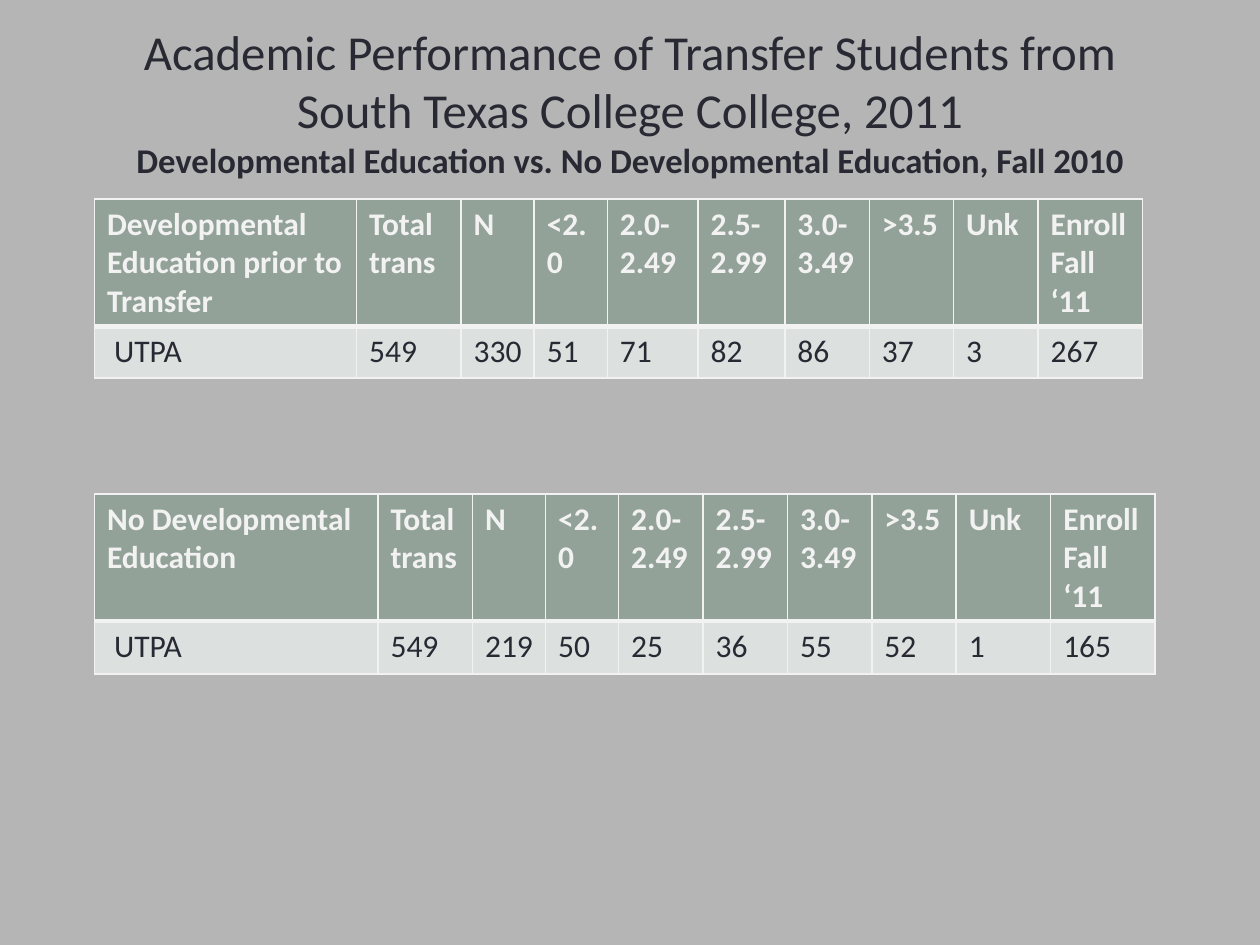
from dataclasses import dataclass

from lxml import etree
from pptx import Presentation
from pptx.dml.color import RGBColor
from pptx.enum.text import MSO_ANCHOR, PP_ALIGN
from pptx.oxml.ns import qn
from pptx.util import Inches, Pt

CENTER = PP_ALIGN.CENTER
MIDDLE = MSO_ANCHOR.MIDDLE
FONT = "Calibri"
COLORS = {
    "background": "B5B5B5",
    "ink": "292934",
    "light": "F2F2F2",
    "header": "93A299",
    "body": "DCE0DE",
}
THIN, THICK = 1, 3
HEADER_HEIGHT = 1.01
TABLE_LEFT = 0.75
GRADE_HEADINGS = ["Total\ntrans", "N", "<2.0", "2.0-2.49", "2.5-2.99",
                  "3.0-3.49", ">3.5", "Unk"]


@dataclass
class GradeTable:
    top: float
    body_height: float
    widths: list[float]
    group: str
    enrolled_heading: str
    values: list[int]


GRADE_TABLES = [
    GradeTable(1.58, 0.41,
               [2.08, 0.83, 0.58, 0.58, 0.72, 0.69, 0.67, 0.67, 0.67, 0.83],
               "Developmental Education prior to Transfer", "Enroll Fall ‘11",
               [549, 330, 51, 71, 82, 86, 37, 3, 267]),
    GradeTable(3.92, 0.42,
               [2.25, 0.75, 0.58, 0.58, 0.67, 0.67, 0.67, 0.67, 0.75, 0.83],
               "No Developmental Education", "Enroll\nFall\n‘11",
               [549, 219, 50, 25, 36, 55, 52, 1, 165]),
]


def style_paragraph(paragraph, size: float, color: str, bold: bool) -> None:
    font = paragraph.font
    font.name, font.size, font.bold = FONT, Pt(size), bold
    font.color.rgb = RGBColor.from_string(COLORS[color])


def set_borders(cell, top: float, bottom: float) -> None:
    properties = cell._tc.get_or_add_tcPr()
    for side, width in (("L", THIN), ("R", THIN), ("T", top), ("B", bottom)):
        line = etree.SubElement(properties, qn(f"a:ln{side}"), w=str(Pt(width)))
        fill = etree.SubElement(line, qn("a:solidFill"))
        etree.SubElement(fill, qn("a:srgbClr"), val=COLORS["light"])


def fill_cell(cell, text: str, is_header: bool) -> None:
    cell.text = text
    for paragraph in cell.text_frame.paragraphs:
        style_paragraph(paragraph, 18, "light" if is_header else "ink", is_header)
    # The thick rule lies between the header and the body
    set_borders(cell, *((THIN, THICK) if is_header else (THICK, THIN)))
    cell.fill.solid()
    cell.fill.fore_color.rgb = RGBColor.from_string(
        COLORS["header" if is_header else "body"])


def add_grade_table(slide, grades: GradeTable) -> None:
    rows = [
        [grades.group, *GRADE_HEADINGS, grades.enrolled_heading],
        [" UTPA", *map(str, grades.values)],
    ]
    heights = [HEADER_HEIGHT, grades.body_height]
    table = slide.shapes.add_table(
        len(rows), len(grades.widths), Inches(TABLE_LEFT), Inches(grades.top),
        Inches(sum(grades.widths)), Inches(sum(heights))).table
    for column, width in zip(table.columns, grades.widths):
        column.width = Inches(width)
    for row_index, (texts, height) in enumerate(zip(rows, heights)):
        table.rows[row_index].height = Inches(height)
        for column_index, text in enumerate(texts):
            fill_cell(table.cell(row_index, column_index), text, row_index == 0)


def add_title(slide) -> None:
    box = slide.shapes.add_textbox(Inches(0.5), Inches(0.3), Inches(9), Inches(1.25))
    frame = box.text_frame
    frame.word_wrap = True
    frame.vertical_anchor = MIDDLE
    frame.margin_top, frame.margin_bottom = Inches(0), Inches(0.25)
    frame.text = ("Academic Performance of Transfer Students from\v"
                  "South Texas College College, 2011\n"
                  "Developmental Education vs. No Developmental Education, Fall 2010")
    heading, subtitle = frame.paragraphs
    style_paragraph(heading, 27.9, "ink", False)
    style_paragraph(subtitle, 19.8, "ink", True)
    heading.alignment = subtitle.alignment = CENTER


def main() -> None:
    presentation = Presentation()
    presentation.slide_width, presentation.slide_height = Inches(10), Inches(7.5)
    slide = presentation.slides.add_slide(presentation.slide_layouts[6])

    # Background
    background = slide.background.fill
    background.solid()
    background.fore_color.rgb = RGBColor.from_string(COLORS["background"])

    # Title and the two grade tables
    add_title(slide)
    for grades in GRADE_TABLES:
        add_grade_table(slide, grades)

    presentation.save("out.pptx")


if __name__ == "__main__":
    main()
